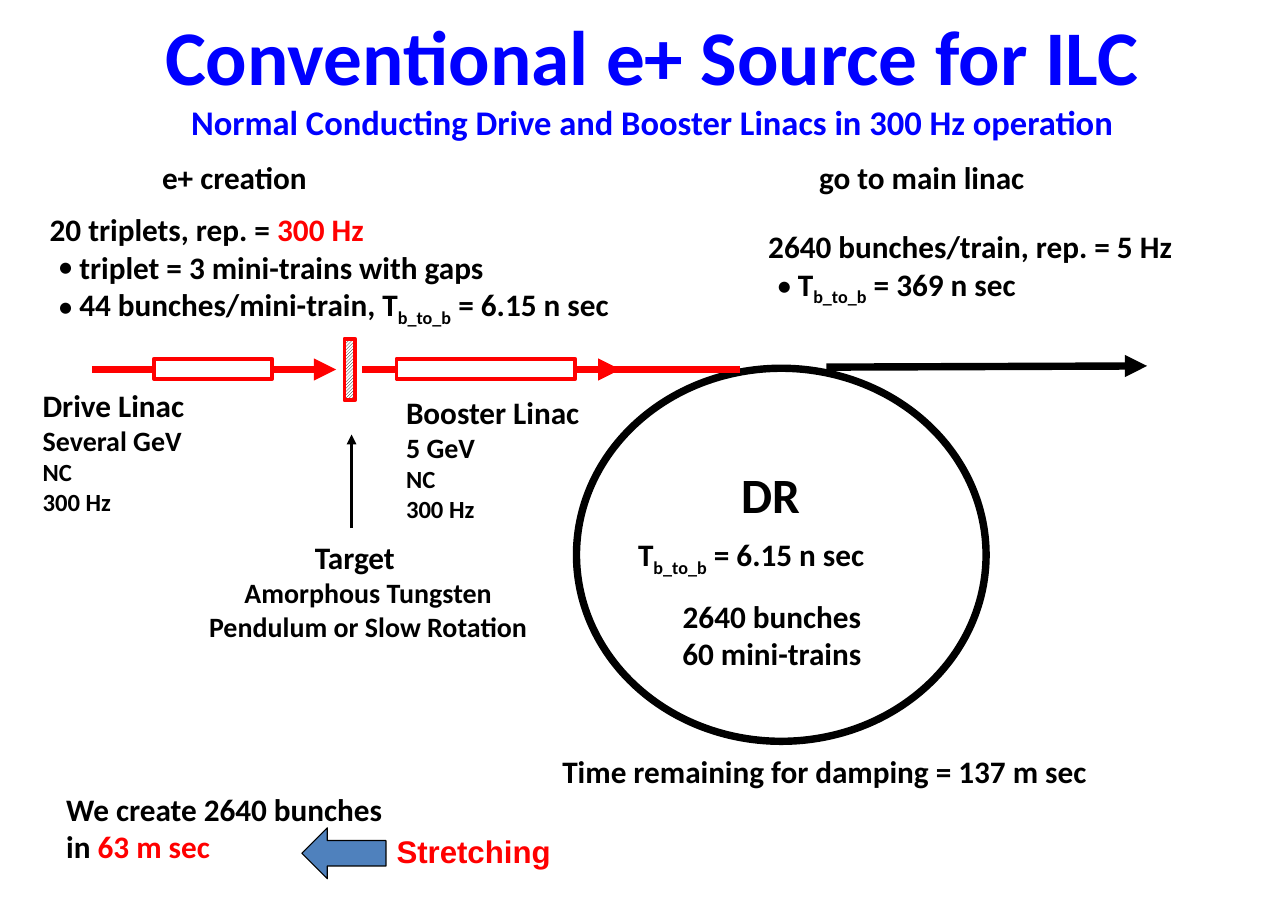
import lxml.etree
import pptx
import pptx.dml.color
import pptx.enum.dml
import pptx.enum.shapes
import pptx.enum.text
import pptx.oxml.ns
import pptx.util

PX = pptx.util.Inches(1) // 100
BLACK, WHITE, RED, BLUE, STEEL = "000000", "FFFFFF", "FF0000", "0000FF", "4F81BD"
SUBSCRIPT = {"baseline": -25000}
BUNCH_SPACING = ("b_to_b", SUBSCRIPT)

colour = pptx.dml.color.RGBColor.from_string
qn = pptx.oxml.ns.qn
SHAPE = pptx.enum.shapes.MSO_SHAPE

deck = pptx.Presentation()
deck.slide_width = 1088 * PX
deck.slide_height = 776 * PX
slide = deck.slides.add_slide(deck.slide_layouts[6])


def write(lines, left, top, width, height, size=19, font="Calibri",
          color=BLACK, centred=False, sizes=(), bullets=False):
    box = slide.shapes.add_textbox(left * PX, top * PX, width * PX, height * PX)
    frame = box.text_frame
    frame.word_wrap = True
    frame.auto_size = pptx.enum.text.MSO_AUTO_SIZE.SHAPE_TO_FIT_TEXT
    frame.margin_left = frame.margin_right = 11 * PX
    frame.margin_top = frame.margin_bottom = 5 * PX
    for index, line in enumerate(lines):
        paragraph = frame.add_paragraph() if index else frame.paragraphs[0]
        if centred:
            paragraph.alignment = pptx.enum.text.PP_ALIGN.CENTER
        if bullets and index:
            properties = paragraph._p.get_or_add_pPr()
            properties.set("marL", str(25 * PX))
            properties.set("indent", str(-18 * PX))
            lxml.etree.SubElement(properties, qn("a:buFont"), typeface=font)
            lxml.etree.SubElement(properties, qn("a:buChar"), char="•")
        for part in [line] if isinstance(line, str) else line:
            text, changes = (part, {}) if isinstance(part, str) else part
            run = paragraph.add_run()
            run.text = text
            run.font.name = font
            run.font.bold = True
            run.font.size = pptx.util.Pt(sizes[index] if sizes else size)
            run.font.color.rgb = colour(changes.get("color", color))
            if "baseline" in changes:
                run._r.get_or_add_rPr().set("baseline", str(changes["baseline"]))


def draw(kind, left, top, width, height, line, weight, fill=None):
    shape = slide.shapes.add_shape(kind, left * PX, top * PX, width * PX, height * PX)
    shape.shadow.inherit = False
    shape.line.color.rgb = colour(line)
    shape.line.width = pptx.util.Pt(weight)
    if fill:
        shape.fill.solid()
        shape.fill.fore_color.rgb = colour(fill)
    else:
        shape.fill.background()
    return shape


draw(SHAPE.OVAL, 487, 311, 346, 315, BLACK, 4.5)

beam_lines = [
    (698, 310, 969, 309, BLACK, 4.5, True),
    (504, 312, 625, 312, RED, 4.5, False),
    (78, 312, 284, 312, RED, 4.5, True),
    (306, 312, 524, 312, RED, 4.5, True),
    (297, 446, 297, 367, BLACK, 1.5, True),
]
for x1, y1, x2, y2, color, weight, has_arrow in beam_lines:
    beam = slide.shapes.add_connector(
        pptx.enum.shapes.MSO_CONNECTOR.STRAIGHT, x1 * PX, y1 * PX, x2 * PX, y2 * PX)
    beam.line.color.rgb = colour(color)
    beam.line.width = pptx.util.Pt(weight)
    if has_arrow:
        lxml.etree.SubElement(beam.line._get_or_add_ln(), qn("a:tailEnd"), type="triangle")
    lxml.etree.SubElement(beam._element.spPr, qn("a:effectLst"))

for linac_left, linac_width in [(130, 100), (335, 151)]:
    draw(SHAPE.RECTANGLE, linac_left, 303, linac_width, 17, RED, 2.25, WHITE)

target = draw(SHAPE.RECTANGLE, 291, 286, 9, 52, RED, 2.25)
target.fill.patterned()
target.fill.pattern = pptx.enum.dml.MSO_PATTERN.LIGHT_UPWARD_DIAGONAL
target.fill.fore_color.rgb = colour(BLACK)
target.fill.back_color.rgb = colour(WHITE)

draw(SHAPE.LEFT_ARROW, 255, 699, 71, 43, BLACK, 0.75, STEEL)

write(["e+ creation"], 126, 129, 293, 43)
write(["go to main linac"], 681, 129, 379, 43)
write([["20 triplets, rep. = ", ("300 Hz", {"color": RED})],
       "triplet = 3 mini-trains with gaps",
       ["44 bunches/mini-train, T", BUNCH_SPACING, " = 6.15 n sec"]],
      31, 173, 605, 107, bullets=True)
write(["2640 bunches/train, rep. = 5 Hz", ["T", BUNCH_SPACING, " = 369 n sec"]],
      638, 187, 436, 75, bullets=True)

write(["Drive Linac", "Several GeV", "NC", "300 Hz"],
      25, 321, 279, 122, sizes=(19, 17, 15, 15))
write(["Booster Linac", "5 GeV", "NC", "300 Hz"],
      332, 327, 218, 122, sizes=(19, 17, 15, 15))
write(["Target"], 255, 450, 119, 43)
write(["Amorphous Tungsten", "Pendulum or Slow Rotation"],
      54, 481, 514, 68, size=17, centred=True)

write(["DR"], 615, 387, 117, 61, size=30)
write([["T", BUNCH_SPACING, " = 6.15 n sec"]], 528, 447, 286, 43)
write(["2640 bunches", "60 mini-trains"], 537, 499, 230, 75, centred=True)
write(["Time remaining for damping = 137 m sec"], 464, 630, 615, 43)

write(["We create 2640 bunches", ["in ", ("63 m sec", {"color": RED})]], 45, 662, 354, 75)
write(["Stretching"], 324, 698, 328, 43, font="Arial", color=RED)

write(["Conventional e+ Source for ILC",
       "Normal Conducting Drive and Booster Linacs in 300 Hz operation"],
      67, 2, 968, 125, color=BLUE, centred=True, sizes=(47, 21))

deck.save("out.pptx")
